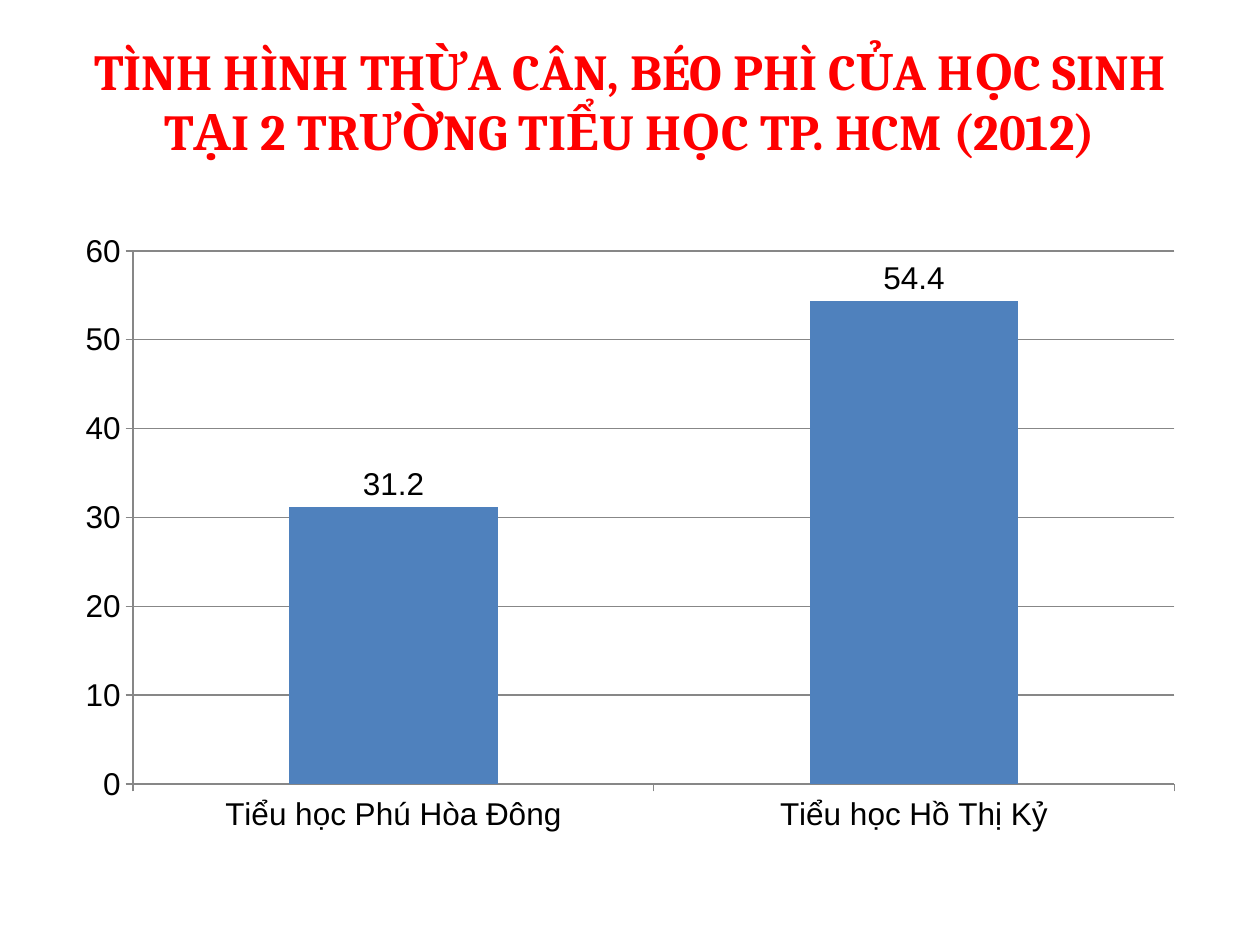
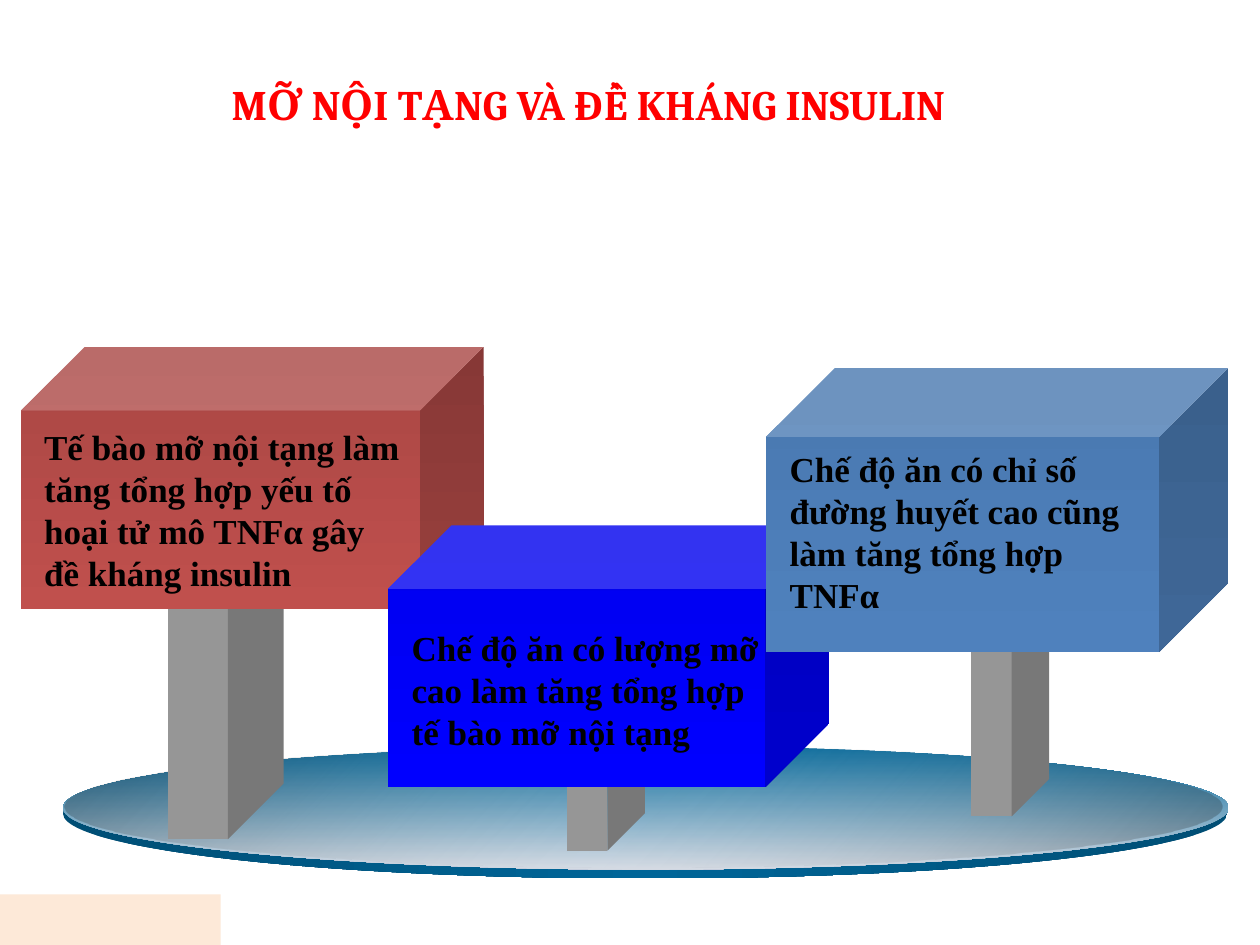
import pptx
import pptx.chart.data
import pptx.dml.color
import pptx.enum.chart
import pptx.enum.shapes
import pptx.enum.text
import pptx.oxml
import pptx.oxml.ns
import pptx.util
from pptx.util import Cm, Pt

SHAPE = pptx.enum.shapes.MSO_SHAPE
ALIGN = pptx.enum.text.PP_ALIGN
ANCHOR = pptx.enum.text.MSO_ANCHOR

COLOURS = {
    "title": "FF0000", "text": "000000", "bar": "4F81BD", "axis": "878787",
    "pole": "969696", "band": "FDE9D8",
}

# Content: places are left, top, width, height in cm
OBESITY = {
    "title": "TÌNH HÌNH THỪA CÂN, BÉO PHÌ CỦA HỌC SINH TẠI 2 TRƯỜNG TIỂU HỌC TP. HCM (2012)",
    "title_at": (1.27, 0.43, 22.86, 3.18),
    "chart_at": (1.27, 4.45, 22.86, 12.57),
    "rates": {"Tiểu học Phú Hòa Đông": 31.2, "Tiểu học Hồ Thị Kỷ": 54.4},
}
INSULIN = {
    "title": "MỠ NỘI TẠNG VÀ ĐỀ KHÁNG INSULIN",
    "title_at": (0.43, 1.45, 22.86, 1.27),
    "band_at": (0, 18.03, 4.45, 1.02),
}
# Gradient stops are position, colour, opacity (all in percent)
PLATFORM = [
    ((1.27, 15.09, 23.47, 2.62), [(0, "004E75", 100), (50, "006699", 100), (100, "004E75", 100)], 0),
    ((1.27, 15.04, 23.5, 2.49), [(0, "006699", 100), (100, "D4DAE3", 100)], 90),
    ((1.3, 15.04, 23.34, 2.44), [(0, "000000", 27), (50, "FFFFFF", 5), (100, "000000", 27)], 45),
]
SIGNS = [
    {"pole": (3.38, 11, 2.34, 5.92), "box": (0.43, 6.99, 9.32, 5.28),
     "shades": ("A94644", "C0504D"), "text_at": (0.64, 8.46, 7.82, 3.68),
     "text": "Tế bào mỡ nội tạng làm tăng tổng hợp yếu tố hoại tử mô TNFα gây đề kháng insulin"},
    {"pole": (11.43, 13.97, 1.57, 3.18), "box": (7.82, 10.59, 8.89, 5.28),
     "shades": ("0000EE", "0000FF"), "text_at": (8.05, 12.5, 7.62, 2.82),
     "text": "Chế độ ăn có lượng mỡ cao làm tăng tổng hợp tế bào mỡ nội tạng"},
    {"pole": (19.58, 11.63, 1.57, 4.83), "box": (15.44, 7.42, 9.32, 5.72),
     "shades": ("4978B0", "4F81BD"), "text_at": (15.67, 8.89, 7.42, 3.68),
     "text": "Chế độ ăn có chỉ số đường huyết cao cũng làm tăng tổng hợp TNFα"},
]
POLE_DEPTH, BOX_DEPTH = 0.48, 0.243


def rgb(colour):
    return pptx.dml.color.RGBColor.from_string(colour)


def place(at):
    return [Cm(length) for length in at]


def style_font(font, name, size, colour, bold=False):
    font.name, font.size, font.bold = name, Pt(size), bold
    font.color.rgb = rgb(colour)


def add_text(slide, at, text, name, size, colour, align=ALIGN.LEFT, anchor=ANCHOR.TOP):
    frame = slide.shapes.add_textbox(*place(at)).text_frame
    frame.word_wrap = True
    frame.vertical_anchor = anchor
    frame.text = text
    frame.paragraphs[0].alignment = align
    style_font(frame.paragraphs[0].runs[0].font, name, size, colour, bold=True)


def add_title(slide, content, size):
    add_text(slide, content["title_at"], content["title"], "Cambria", size,
             COLOURS["title"], ALIGN.CENTER, ANCHOR.MIDDLE)


def add_solid(slide, kind, at, colour, depth=None):
    shape = slide.shapes.add_shape(kind, *place(at))
    shape.shadow.inherit = False
    shape.line.fill.background()
    shape.fill.solid()
    shape.fill.fore_color.rgb = rgb(colour)
    if depth is not None:
        shape.adjustments[0] = depth
    return shape


def add_gradient(slide, kind, at, stops, angle, depth=None):
    shape = add_solid(slide, kind, at, stops[0][1], depth)
    stop_xml = "".join(
        f'<a:gs pos="{position * 1000}"><a:srgbClr val="{colour}">'
        f'<a:alpha val="{opacity * 1000}"/></a:srgbClr></a:gs>'
        for position, colour, opacity in stops)
    gradient = pptx.oxml.parse_xml(
        f'<a:gradFill {pptx.oxml.ns.nsdecls("a")} rotWithShape="1"><a:gsLst>{stop_xml}</a:gsLst>'
        f'<a:lin ang="{angle * 60000}" scaled="0"/></a:gradFill>')
    properties = shape._element.spPr
    properties.replace(properties.find(pptx.oxml.ns.qn("a:solidFill")), gradient)


def build_obesity(slide):
    add_title(slide, OBESITY, 28.8)

    # Column chart
    data = pptx.chart.data.CategoryChartData()
    data.categories = list(OBESITY["rates"])
    data.add_series("Series 1", list(OBESITY["rates"].values()))
    chart = slide.shapes.add_chart(
        pptx.enum.chart.XL_CHART_TYPE.COLUMN_CLUSTERED, *place(OBESITY["chart_at"]), data).chart
    chart.has_legend = chart.has_title = False
    style_font(chart.font, "Arial", 18, COLOURS["text"])

    columns = chart.plots[0]
    columns.gap_width = 150
    columns.vary_by_categories = False
    columns.has_data_labels = True
    columns.data_labels.show_value = True
    columns.data_labels.position = pptx.enum.chart.XL_LABEL_POSITION.OUTSIDE_END
    columns.series[0].format.fill.solid()
    columns.series[0].format.fill.fore_color.rgb = rgb(COLOURS["bar"])

    # Axes and gridlines
    rates = chart.value_axis
    rates.minimum_scale, rates.maximum_scale, rates.major_unit = 0, 60, 10
    rates.has_major_gridlines = True
    for axis in (chart.category_axis, rates):
        axis.major_tick_mark = pptx.enum.chart.XL_TICK_MARK.OUTSIDE
    for part in (chart.category_axis, rates, rates.major_gridlines):
        part.format.line.color.rgb = rgb(COLOURS["axis"])
        part.format.line.width = Pt(0.75)


def build_insulin(slide):
    add_title(slide, INSULIN, 24)

    # Platform
    for at, stops, angle in PLATFORM:
        add_gradient(slide, SHAPE.OVAL, at, stops, angle)

    # Signs on poles, then their wording on top
    for sign in SIGNS:
        add_solid(slide, SHAPE.CUBE, sign["pole"], COLOURS["pole"], POLE_DEPTH)
        dark, light = sign["shades"]
        add_gradient(slide, SHAPE.CUBE, sign["box"],
                     [(0, dark, 100), (100, light, 100)], 90, BOX_DEPTH)
    for sign in SIGNS:
        add_text(slide, sign["text_at"], sign["text"], "Times New Roman", 20, COLOURS["text"])

    # Corner band
    add_solid(slide, SHAPE.RECTANGLE, INSULIN["band_at"], COLOURS["band"])


def main():
    deck = pptx.Presentation()
    deck.slide_width, deck.slide_height = Cm(25.4), Cm(19.05)
    for build in (build_obesity, build_insulin):
        build(deck.slides.add_slide(deck.slide_layouts[6]))
    deck.save("out.pptx")


if __name__ == "__main__":
    main()
